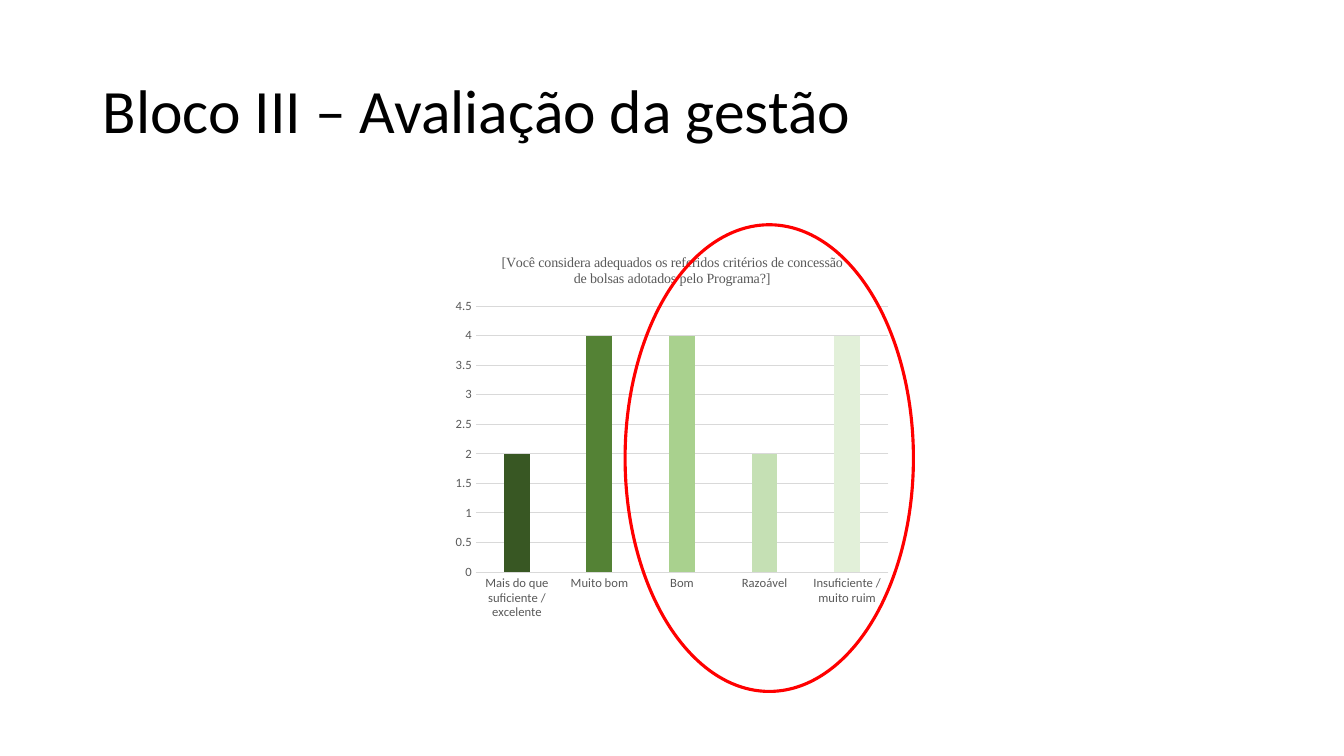
from pptx import Presentation
from pptx.chart.data import CategoryChartData
from pptx.dml.color import RGBColor
from pptx.enum.chart import XL_CHART_TYPE, XL_TICK_MARK
from pptx.enum.shapes import MSO_SHAPE
from pptx.enum.text import MSO_ANCHOR, PP_ALIGN
from pptx.util import Pt

TITLE = "Bloco III – Avaliação da gestão"
ASK = ("[Você considera adequados os referidos critérios de concessão "
       "de bolsas adotados pelo Programa?]")
VOTES = [  # answer, count, bar colour
    ("Mais do que suficiente / excelente", 2, "385723"),
    ("Muito bom", 4, "548235"),
    ("Bom", 4, "A9D18E"),
    ("Razoável", 2, "C5E0B4"),
    ("Insuficiente / muito ruim", 4, "E2F0D9"),
]
COLORS = {"text": "000000", "label": "595959", "grid": "D9D9D9",
          "bar": "4472C4", "ring": "FF0000"}
SIZE = (1333, 750)
BOXES = {"title": (92, 40, 1150, 145), "chart": (443, 236, 447, 387),
         "ring": (620, 223, 286, 463)}
PX = 9144  # EMU per px, 100 px to the inch


def emu(box):
    return [n * PX for n in box]


def rgb(name):
    return RGBColor.from_string(COLORS[name])


def style(font, size, color, face="Calibri"):
    font.size, font.name, font.bold = Pt(size), face, False
    font.color.rgb = rgb(color)


def rule(line, color, width):
    line.color.rgb = rgb(color)
    line.width = Pt(width)


def add_title(slide):
    title = slide.shapes.title
    title.left, title.top, title.width, title.height = emu(BOXES["title"])
    frame = title.text_frame
    frame.text = TITLE
    frame.word_wrap = True
    frame.vertical_anchor = MSO_ANCHOR.MIDDLE
    para = frame.paragraphs[0]
    para.alignment = PP_ALIGN.LEFT
    para.line_spacing = 0.9
    style(para.runs[0].font, 44, "text")


def add_votes(slide):
    data = CategoryChartData()
    data.categories = [name for name, _, _ in VOTES]
    data.add_series(ASK, [count for _, count, _ in VOTES])
    chart = slide.shapes.add_chart(
        XL_CHART_TYPE.COLUMN_CLUSTERED, *emu(BOXES["chart"]), data).chart
    style(chart.font, 10, "text")
    chart.has_legend = False
    chart.has_title = True
    head = chart.chart_title
    head.include_in_layout = False
    head.text_frame.text = ASK
    style(head.text_frame.paragraphs[0].runs[0].font, 10, "label",
          "Times New Roman")

    for axis in (chart.category_axis, chart.value_axis):
        axis.major_tick_mark = axis.minor_tick_mark = XL_TICK_MARK.NONE
        style(axis.tick_labels.font, 9, "label")
    rule(chart.category_axis.format.line, "grid", 0.75)
    scale = chart.value_axis
    scale.format.line.fill.background()
    scale.has_major_gridlines = True
    rule(scale.major_gridlines.format.line, "grid", 0.75)

    plot = chart.plots[0]
    plot.vary_by_categories = False
    plot.gap_width, plot.overlap = 219, -27
    bars = plot.series[0]
    bars.format.fill.solid()
    bars.format.fill.fore_color.rgb = rgb("bar")
    for i, (_, _, color) in enumerate(VOTES):
        fill = bars.points[i].format.fill
        fill.solid()
        fill.fore_color.rgb = RGBColor.from_string(color)


def add_ring(slide):
    ring = slide.shapes.add_shape(MSO_SHAPE.OVAL, *emu(BOXES["ring"]))
    ring.shadow.inherit = False
    ring.fill.background()
    rule(ring.line, "ring", 2.25)


def main():
    deck = Presentation()
    deck.slide_width, deck.slide_height = emu(SIZE)
    slide = deck.slides.add_slide(deck.slide_layouts[5])
    add_title(slide)
    add_votes(slide)
    add_ring(slide)
    deck.save("out.pptx")


if __name__ == "__main__":
    main()
